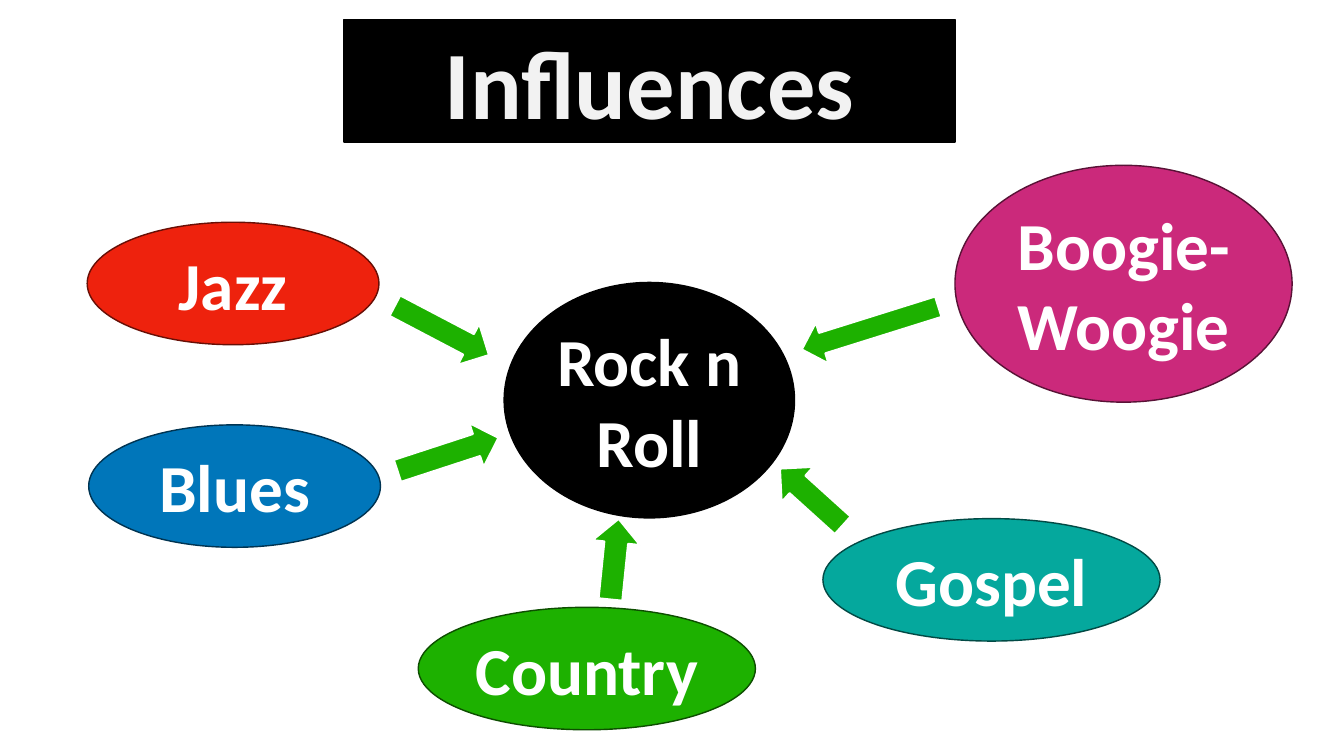
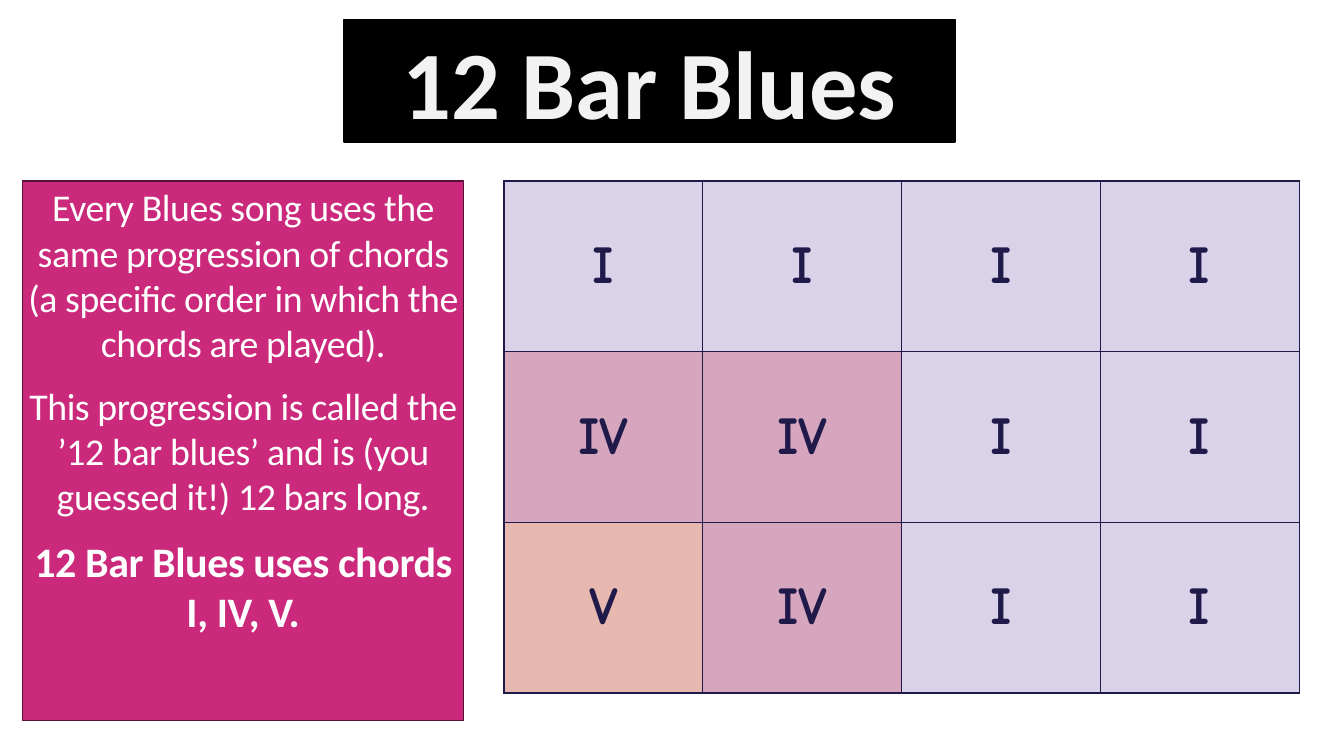
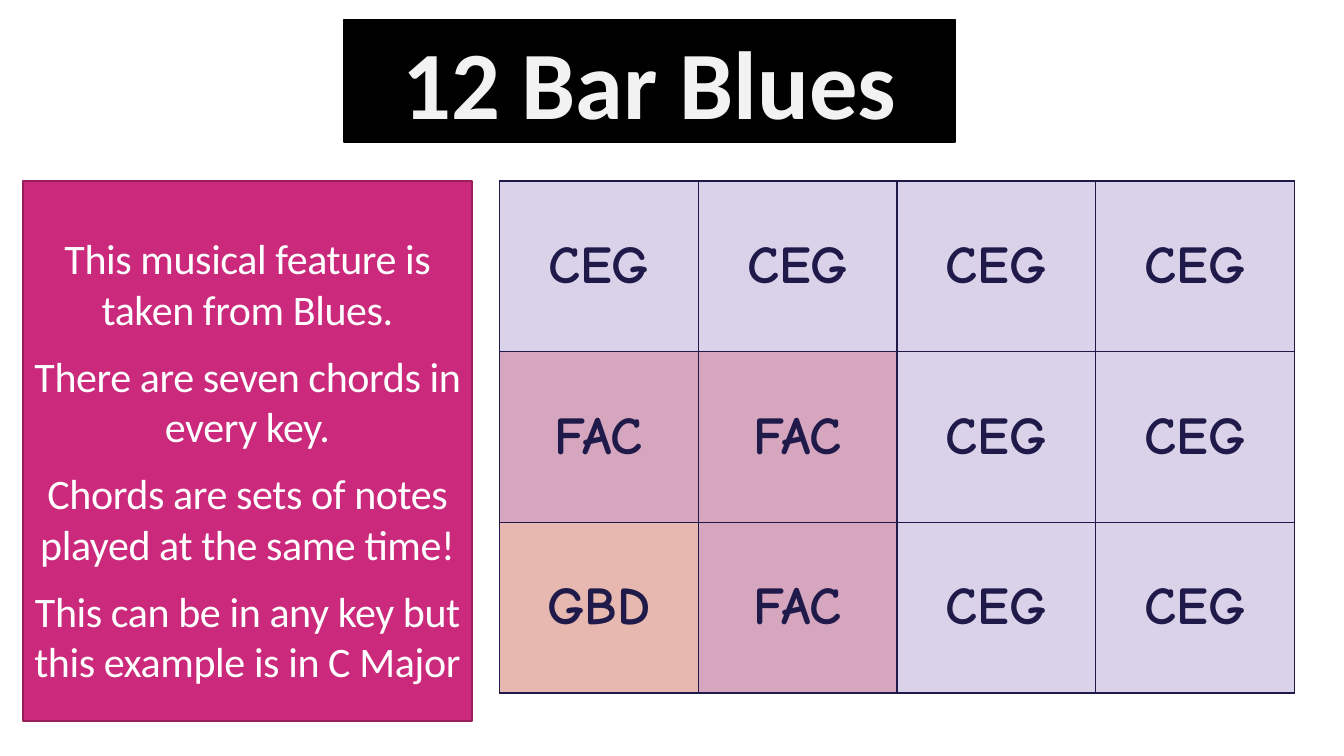
from lxml import etree
from pptx import Presentation
from pptx.dml.color import RGBColor
from pptx.enum import shapes as sh, text as tx
from pptx.oxml import ns
from pptx.util import Inches, Pt

BLACK = RGBColor(0x00, 0x00, 0x00)
WHITE = RGBColor(0xFF, 0xFF, 0xFF)
PALE = RGBColor(0xF2, 0xF2, 0xF2)
RED = RGBColor(0xEE, 0x22, 0x0D)
MAROON = RGBColor(0x68, 0x0F, 0x06)
BLUE = RGBColor(0x00, 0x76, 0xBA)
NAVY = RGBColor(0x00, 0x34, 0x52)
PINK = RGBColor(0xCB, 0x29, 0x7B)
PLUM = RGBColor(0x59, 0x12, 0x36)
ROSE = RGBColor(0x98, 0x1F, 0x5C)
TEAL = RGBColor(0x05, 0xA8, 0x9D)
PINE = RGBColor(0x02, 0x4A, 0x45)
GREEN = RGBColor(0x1D, 0xB1, 0x00)
MOSS = RGBColor(0x0D, 0x4E, 0x00)
INK = RGBColor(0x1F, 0x1A, 0x4A)
LILAC = RGBColor(0xD9, 0xD2, 0xE9)
MAUVE = RGBColor(0xD5, 0xA6, 0xBD)
PEACH = RGBColor(0xE6, 0xB8, 0xAF)

SANS, COMIC = "Calibri", "Comic Neue"
PAD = 0.06

STYLES = [
    ("Rock n Roll", (9.99, 5.59, 5.79, 4.7), BLACK, None),
    ("Jazz", (1.73, 4.41, 5.79, 2.43), RED, MAROON),
    ("Blues", (1.76, 8.43, 5.79, 2.43), BLUE, NAVY),
    ("Boogie-Woogie", (18.95, 3.28, 6.69, 4.7), PINK, PLUM),
    ("Gospel", (16.33, 10.29, 6.69, 2.43), TEAL, PINE),
    ("Country", (8.3, 12.05, 6.69, 2.43), GREEN, MOSS),
]
ARROWS = [
    ((11.72, 10.29, 0.95, 1.61), 185.8),
    ((8.43, 7.96, 0.92, 2.11), 251.9),
    ((8.31, 5.5, 0.92, 2.11), 297.7),
    ((16.84, 5.09, 0.85, 2.84), 72.6),
    ((15.63, 9.02, 0.94, 1.68), 132.1),
]
BARS = [
    ["I", "I", "I", "I"],
    ["IV", "IV", "I", "I"],
    ["V", "IV", "I", "I"],
]
TINTS = {"I": LILAC, "IV": MAUVE, "V": PEACH}
NOTES = {"I": "CEG", "IV": "FAC", "V": "GBD"}
FORM = [
    ("Every Blues song uses the same progression of chords "
     "(a specific order in which the chords are played).", 54, False),
    ("This progression is called the ’12 bar blues’ and is "
     "(you guessed it!) 12 bars long.", 54, False),
    ("12 Bar Blues uses chords I, IV, V.", 60, True),
]
CHORDS = [(line, 60, False) for line in (
    "This musical feature is taken from Blues.",
    "There are seven chords in every key.",
    "Chords are sets of notes played at the same time!",
    "This can be in any key but this example is in C Major",
)]


def add_shape(slide, kind, box, fill, edge, width=2):
    shape = slide.shapes.add_shape(kind, *map(Inches, box))
    shape.shadow.inherit = False
    shape.fill.solid()
    shape.fill.fore_color.rgb = fill
    if edge is None:
        shape.line.fill.background()
    else:
        shape.line.color.rgb = edge
        shape.line.width = Pt(width)
    return shape


def set_font(para, size, color, bold=True, face=SANS):
    para.alignment = tx.PP_ALIGN.CENTER
    font = para.font
    font.name, font.size, font.bold = face, Pt(size), bold
    font.color.rgb = color


def set_frame(shape, anchor=tx.MSO_ANCHOR.MIDDLE, top=PAD):
    frame = shape.text_frame
    frame.word_wrap = True
    frame.vertical_anchor = anchor
    frame.margin_left = frame.margin_right = frame.margin_bottom = Inches(PAD)
    frame.margin_top = Inches(top)
    return frame


def add_label(slide, kind, label, box, fill, edge, size=96, color=WHITE):
    frame = set_frame(add_shape(slide, kind, box, fill, edge))
    frame.text = label
    set_font(frame.paragraphs[0], size, color)


def add_slide(deck, title):
    slide = deck.slides.add_slide(deck.slide_layouts[6])
    add_label(slide, sh.MSO_SHAPE.RECTANGLE, title, (6.83, 0.39, 12.12, 2.43),
              BLACK, BLACK, 138, PALE)
    return slide


def add_panel(slide, lines, wide, edge, width, anchor, top):
    panel = add_shape(slide, sh.MSO_SHAPE.RECTANGLE,
                      (0.45, 3.59, wide, 10.71), PINK, edge, width)
    frame = set_frame(panel, anchor, top)
    for i, (line, size, bold) in enumerate(lines):
        para = frame.add_paragraph() if i else frame.paragraphs[0]
        run = para.add_run()
        run.text = line
        run._r.get_or_add_rPr().set("spc", "-60")
        set_font(para, size, WHITE, bold)
        para.space_before = Pt(24 if i else 0)


def set_edges(cell):
    props = cell._tc.get_or_add_tcPr()
    for i, side in enumerate(("lnL", "lnR", "lnT", "lnB")):
        edge = etree.Element(ns.qn("a:" + side), w=str(Pt(2)))
        fill = etree.SubElement(edge, ns.qn("a:solidFill"))
        etree.SubElement(fill, ns.qn("a:srgbClr"), val=str(INK))
        props.insert(i, edge)


def add_bars(slide, left, names):
    rows, cols = len(BARS), len(BARS[0])
    table = slide.shapes.add_table(rows, cols, Inches(left), Inches(3.59),
                                   Inches(15.78), Inches(10.16)).table
    for r, bar in enumerate(BARS):
        for c, chord in enumerate(bar):
            cell = table.cell(r, c)
            cell.text = names[chord]
            cell.fill.solid()
            cell.fill.fore_color.rgb = TINTS[chord]
            cell.vertical_anchor = tx.MSO_ANCHOR.MIDDLE
            cell.margin_left = cell.margin_right = Inches(0.04)
            cell.margin_top = cell.margin_bottom = Inches(0.04)
            set_font(cell.text_frame.paragraphs[0], 76, INK, face=COMIC)
            set_edges(cell)


def main():
    deck = Presentation()
    deck.slide_width, deck.slide_height = Inches(26.67), Inches(15)

    slide = add_slide(deck, "Influences")
    for style in STYLES:
        add_label(slide, sh.MSO_SHAPE.OVAL, *style)
    for box, turn in ARROWS:
        arrow = add_shape(slide, sh.MSO_SHAPE.DOWN_ARROW, box, GREEN, WHITE, 3)
        arrow.rotation = turn

    slide = add_slide(deck, "12 Bar Blues")
    add_panel(slide, FORM, 8.75, PLUM, 2, tx.MSO_ANCHOR.TOP, PAD)
    add_bars(slide, 10, {chord: chord for chord in TINTS})

    slide = add_slide(deck, "12 Bar Blues")
    add_panel(slide, CHORDS, 8.92, ROSE, 3, tx.MSO_ANCHOR.MIDDLE, 0.4)
    add_bars(slide, 9.91, NOTES)

    deck.save("out.pptx")


if __name__ == "__main__":
    main()
